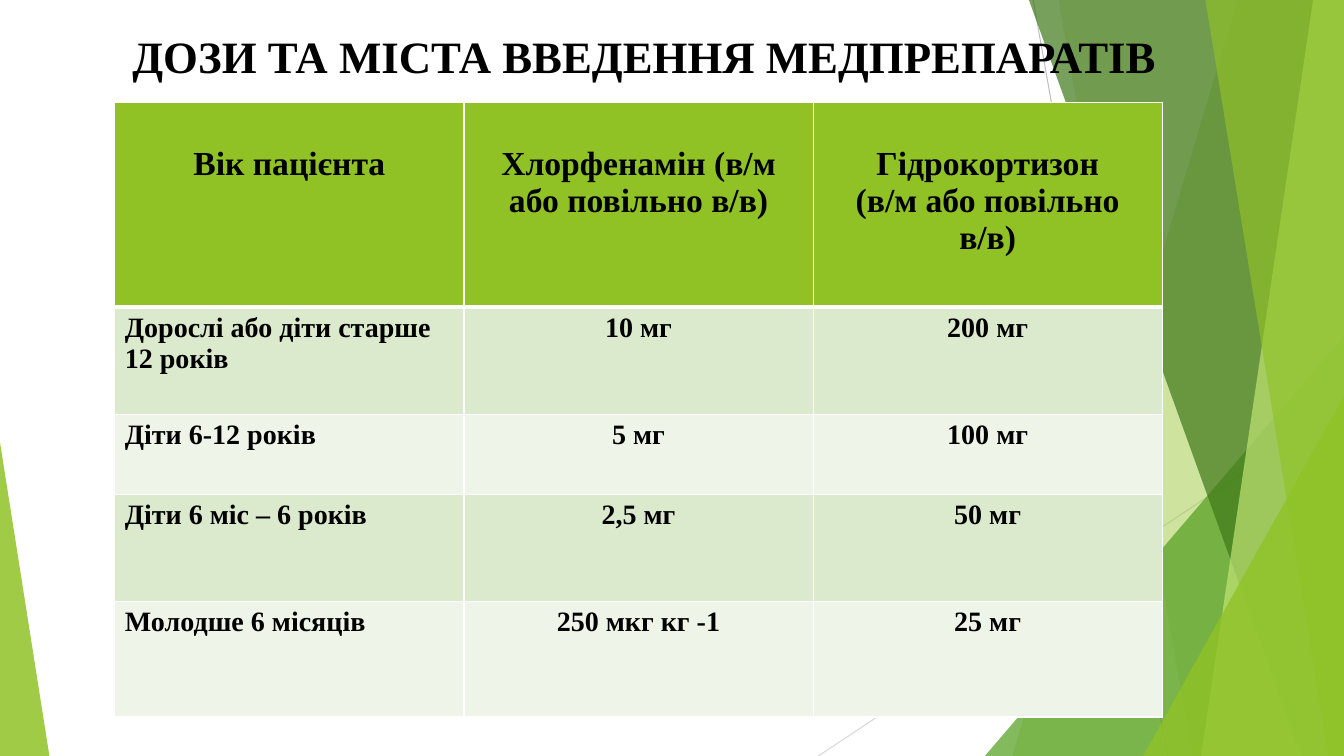
from lxml.etree import SubElement
from pptx import Presentation
from pptx.dml.color import RGBColor
from pptx.enum.shapes import MSO_CONNECTOR as Connector, MSO_SHAPE as Preset
from pptx.enum.text import MSO_ANCHOR as Anchor, MSO_AUTO_SIZE as AutoSize, PP_ALIGN as Align
from pptx.oxml.ns import qn
from pptx.util import Pt

TITLE = "ДОЗИ ТА МІСТА ВВЕДЕННЯ МЕДПРЕПАРАТІВ"
DOSES = [
    ("Вік пацієнта", "Хлорфенамін (в/м\vабо повільно в/в)", "Гідрокортизон\v(в/м або повільно\vв/в)"),
    ("Дорослі або діти старше 12 років", "10 мг", "200 мг"),
    ("Діти 6-12 років", "5 мг", "100 мг"),
    ("Діти 6 міс – 6 років", "2,5 мг", "50 мг"),
    ("Молодше 6 місяців", "250 мкг кг -1", "25 мг"),
]
THEME = {
    "font": "Times New Roman", "text": "000000", "border": "FFFFFF",
    "header": "90C226", "bands": ("DBE9CD", "EEF4E8"),
    "lime": "90C226", "green": "54A021", "forest": "3F7819", "pale": "C0E474",
    "title_size": 32, "header_size": 24, "body_size": 20,
}
WIDTH, HEIGHT = 960, 540
TITLE_BOX = (81.4, 15.1, 758, 49)
TABLE_LEFT, TABLE_TOP, COLUMN_WIDTH = 82, 73.4, 249.4
ROW_HEIGHTS = (146, 76.5, 57.6, 76.3, 82.4)
HEADER_INSET, BODY_INSET = 30.5, 3.6
THIN, THICK = 1, 3

RAYS = [
    ((738, 0), (834, HEIGHT), "BFBFBF"),
    ((WIDTH, 290), (584.6, HEIGHT), "D9D9D9"),
]
FACETS = [
    ("band", 884, 723, "lime", 30),
    ("band", 756, 852, "lime", 20),
    ("triangle", 703.5, 240, "green", 72),
    ("band", 735, 929.5, "forest", 70),
    ("band", 938, 858, "pale", 70),
    ("band", 861, 949, "lime", 65),
    ("triangle", 816.5, 283, "lime", 80),
]
LEFT_WEDGE = (0, 316, 35.3, 224)


def paint(shape, color, opacity):
    shape.shadow.inherit = False
    shape.fill.solid()
    shape.fill.fore_color.rgb = RGBColor.from_string(THEME[color])
    shape.line.fill.background()
    swatch = shape.fill._xPr.find(".//" + qn("a:srgbClr"))
    SubElement(swatch, qn("a:alpha"), val=str(opacity * 1000))


def add_triangle(shapes, box, peak, color, opacity):
    triangle = shapes.add_shape(Preset.ISOSCELES_TRIANGLE, *map(Pt, box))
    triangle.adjustments[0] = peak
    paint(triangle, color, opacity)


def add_band(shapes, top_x, bottom_x, color, opacity):
    builder = shapes.build_freeform(Pt(top_x), 0)
    corners = [(WIDTH, 0), (WIDTH, HEIGHT), (bottom_x, HEIGHT)]
    builder.add_line_segments([(Pt(x), Pt(y)) for x, y in corners], close=True)
    paint(builder.convert_to_shape(), color, opacity)


def add_ray(shapes, start, end, color):
    ray = shapes.add_connector(Connector.STRAIGHT, *map(Pt, start + end))
    ray.line.color.rgb = RGBColor.from_string(color)
    ray.line.width = Pt(0.75)
    SubElement(ray._element.spPr, qn("a:effectLst"))


def write(frame, text, size, align):
    frame.text = text
    paragraph = frame.paragraphs[0]
    paragraph.alignment = align
    formats = {"name": THEME["font"], "size": Pt(size), "bold": True}
    for run in paragraph.runs:
        for name, value in formats.items():
            setattr(run.font, name, value)
        run.font.color.rgb = RGBColor.from_string(THEME["text"])


def add_borders(cell, top, bottom):
    properties = cell._tc.get_or_add_tcPr()
    for side, width in {"L": THIN, "R": THIN, "T": top, "B": bottom}.items():
        border = SubElement(properties, qn("a:ln" + side), w=str(Pt(width)))
        fill = SubElement(border, qn("a:solidFill"))
        SubElement(fill, qn("a:srgbClr"), val=THEME["border"])


def add_doses(shapes):
    columns = len(DOSES[0])
    box = (TABLE_LEFT, TABLE_TOP, COLUMN_WIDTH * columns, sum(ROW_HEIGHTS))
    table = shapes.add_table(len(DOSES), columns, *map(Pt, box)).table
    for column in table.columns:
        column.width = Pt(COLUMN_WIDTH)
    for row_index, (texts, height) in enumerate(zip(DOSES, ROW_HEIGHTS)):
        header = row_index == 0
        table.rows[row_index].height = Pt(height)
        color = THEME["header"] if header else THEME["bands"][(row_index - 1) % 2]
        size = THEME["header_size" if header else "body_size"]
        for column_index, text in enumerate(texts):
            cell = table.cell(row_index, column_index)
            align = Align.CENTER if header or column_index else Align.LEFT
            write(cell.text_frame, text, size, align)
            cell.margin_top = Pt(HEADER_INSET if header else BODY_INSET)
            add_borders(cell, THICK if row_index == 1 else THIN, THICK if header else THIN)
            cell.fill.solid()
            cell.fill.fore_color.rgb = RGBColor.from_string(color)


def add_title(shapes):
    title = shapes.title
    for name, value in zip(("left", "top", "width", "height"), TITLE_BOX):
        setattr(title, name, Pt(value))
    frame = title.text_frame
    formats = {"word_wrap": True, "auto_size": AutoSize.NONE, "vertical_anchor": Anchor.MIDDLE,
               "margin_left": 0, "margin_right": 0, "margin_top": 0, "margin_bottom": 0}
    for name, value in formats.items():
        setattr(frame, name, value)
    write(frame, TITLE, THEME["title_size"], Align.CENTER)
    shapes._spTree.append(title._element)


def main():
    presentation = Presentation()
    presentation.slide_width, presentation.slide_height = Pt(WIDTH), Pt(HEIGHT)
    slide = presentation.slides.add_slide(presentation.slide_layouts[5])
    shapes = slide.shapes
    for ray in RAYS:
        add_ray(shapes, *ray)
    for kind, first, second, color, opacity in FACETS:
        if kind == "band":
            add_band(shapes, first, second, color, opacity)
        else:
            box = (first, second, WIDTH - first, HEIGHT - second)
            add_triangle(shapes, box, 1, color, opacity)
    add_triangle(shapes, LEFT_WEDGE, 0, "lime", 85)
    add_title(shapes)
    add_doses(shapes)
    presentation.save("out.pptx")


if __name__ == "__main__":
    main()
